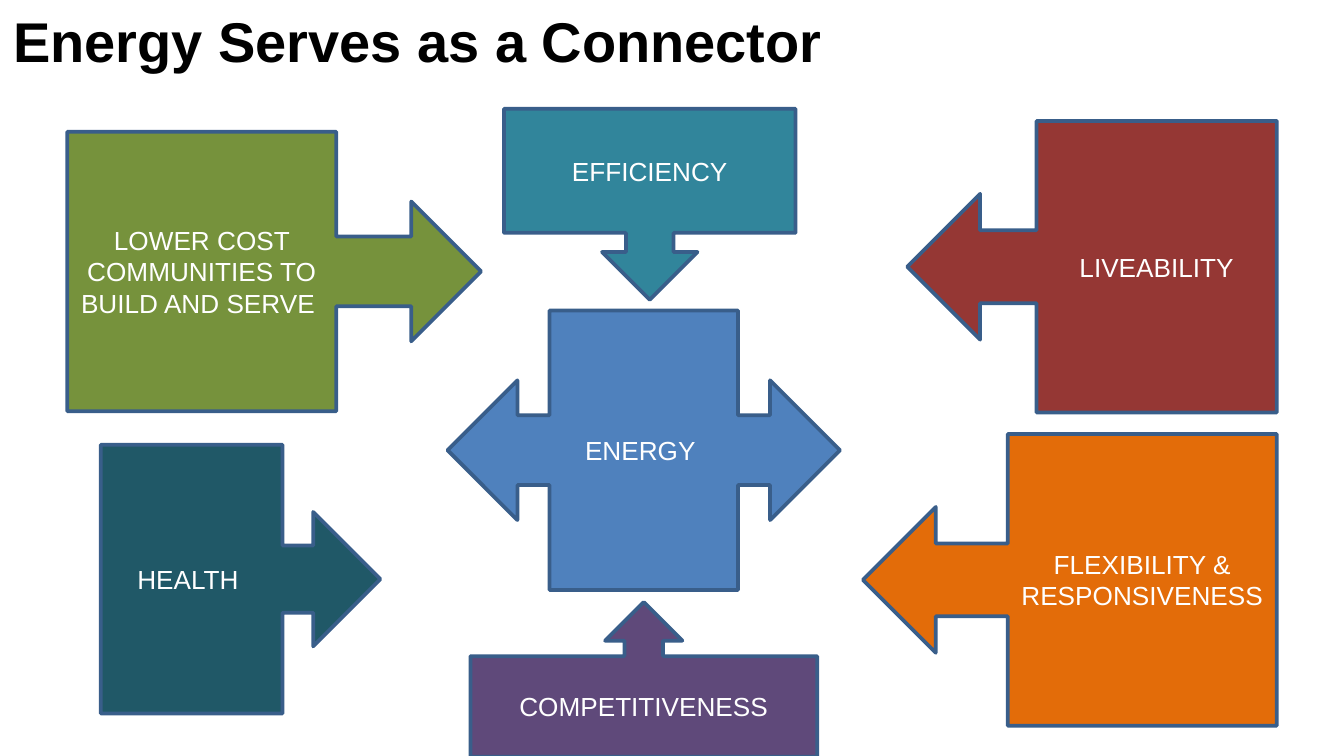
from dataclasses import dataclass

from pptx import Presentation
from pptx.dml.color import RGBColor
from pptx.enum.shapes import MSO_SHAPE
from pptx.enum.text import MSO_ANCHOR, PP_ALIGN
from pptx.util import Inches, Pt

DOWN = MSO_SHAPE.DOWN_ARROW_CALLOUT
UP = MSO_SHAPE.UP_ARROW_CALLOUT
LEFT = MSO_SHAPE.LEFT_ARROW_CALLOUT
RIGHT = MSO_SHAPE.RIGHT_ARROW_CALLOUT
LEFT_RIGHT = MSO_SHAPE.LEFT_RIGHT_ARROW_CALLOUT
TOP, MIDDLE = MSO_ANCHOR.TOP, MSO_ANCHOR.MIDDLE
ALIGN_LEFT, CENTER = PP_ALIGN.LEFT, PP_ALIGN.CENTER

BLACK = RGBColor(0x00, 0x00, 0x00)
WHITE = RGBColor(0xFF, 0xFF, 0xFF)
OUTLINE = RGBColor(0x39, 0x5E, 0x8A)
TEAL = RGBColor(0x31, 0x85, 0x9B)
RED = RGBColor(0x95, 0x37, 0x34)
PURPLE = RGBColor(0x5F, 0x49, 0x7A)
BLUE = RGBColor(0x4F, 0x81, 0xBD)
DARK_TEAL = RGBColor(0x20, 0x58, 0x67)
GREEN = RGBColor(0x76, 0x92, 0x3C)
ORANGE = RGBColor(0xE3, 0x6C, 0x09)

SLIDE_WIDTH = 10
SLIDE_HEIGHT = SLIDE_WIDTH * 9 / 16
TITLE_FONT = {"name": "Arial", "size": Pt(30), "bold": True}
LABEL_FONT = {"name": "Arial", "size": Pt(14), "bold": False}
ARROW_RATIO = 0.25


@dataclass
class Callout:
    text: str
    kind: MSO_SHAPE
    left: float
    top: float
    width: float
    height: float
    fill: RGBColor
    box_ratio: float = 0.65


CALLOUTS = [
    Callout("EFFICIENCY", DOWN, 3.75, 0.81, 2.17, 1.42, TEAL),
    Callout("LIVEABILITY", LEFT, 6.75, 0.9, 2.75, 2.17, RED),
    Callout("COMPETITIVENESS", UP, 3.5, 4.48, 2.58, 1.15, PURPLE),
    Callout("ENERGY ", LEFT_RIGHT, 3.33, 2.31, 2.92, 2.08, BLUE, 0.48),
    Callout("HEALTH ", RIGHT, 0.75, 3.31, 2.08, 2, DARK_TEAL),
    Callout("LOWER COST COMMUNITIES TO BUILD AND SERVE ", RIGHT,
            0.5, 0.98, 3.08, 2.08, GREEN),
    Callout("FLEXIBILITY & RESPONSIVENESS", LEFT, 6.42, 3.23, 3.08, 2.17, ORANGE),
]


def write_text(sp, text: str, font: dict, color: RGBColor,
               align: PP_ALIGN, anchor: MSO_ANCHOR) -> None:
    tf = sp.text_frame
    tf.word_wrap = True
    tf.vertical_anchor = anchor
    p = tf.paragraphs[0]
    p.alignment = align
    r = p.add_run()
    r.text = text
    for name, value in font.items():
        setattr(r.font, name, value)
    r.font.color.rgb = color


def add_title(slide, text: str) -> None:
    sp = slide.shapes.add_textbox(0, 0, Inches(SLIDE_WIDTH), Inches(0.81))
    write_text(sp, text, TITLE_FONT, BLACK, ALIGN_LEFT, TOP)


def add_callout(slide, c: Callout) -> None:
    sp = slide.shapes.add_shape(c.kind, Inches(c.left), Inches(c.top),
                                Inches(c.width), Inches(c.height))
    for i, ratio in enumerate([ARROW_RATIO] * 3 + [c.box_ratio]):
        sp.adjustments[i] = ratio
    sp.shadow.inherit = False
    sp.fill.solid()
    sp.fill.fore_color.rgb = c.fill
    sp.line.color.rgb = OUTLINE
    sp.line.width = Pt(2)
    write_text(sp, c.text, LABEL_FONT, WHITE, CENTER, MIDDLE)


def main() -> None:
    prs = Presentation()
    prs.slide_width = Inches(SLIDE_WIDTH)
    prs.slide_height = Inches(SLIDE_HEIGHT)
    slide = prs.slides.add_slide(prs.slide_layouts[6])
    add_title(slide, "Energy Serves as a Connector")
    for callout in CALLOUTS:
        add_callout(slide, callout)
    prs.save("out.pptx")


if __name__ == "__main__":
    main()
